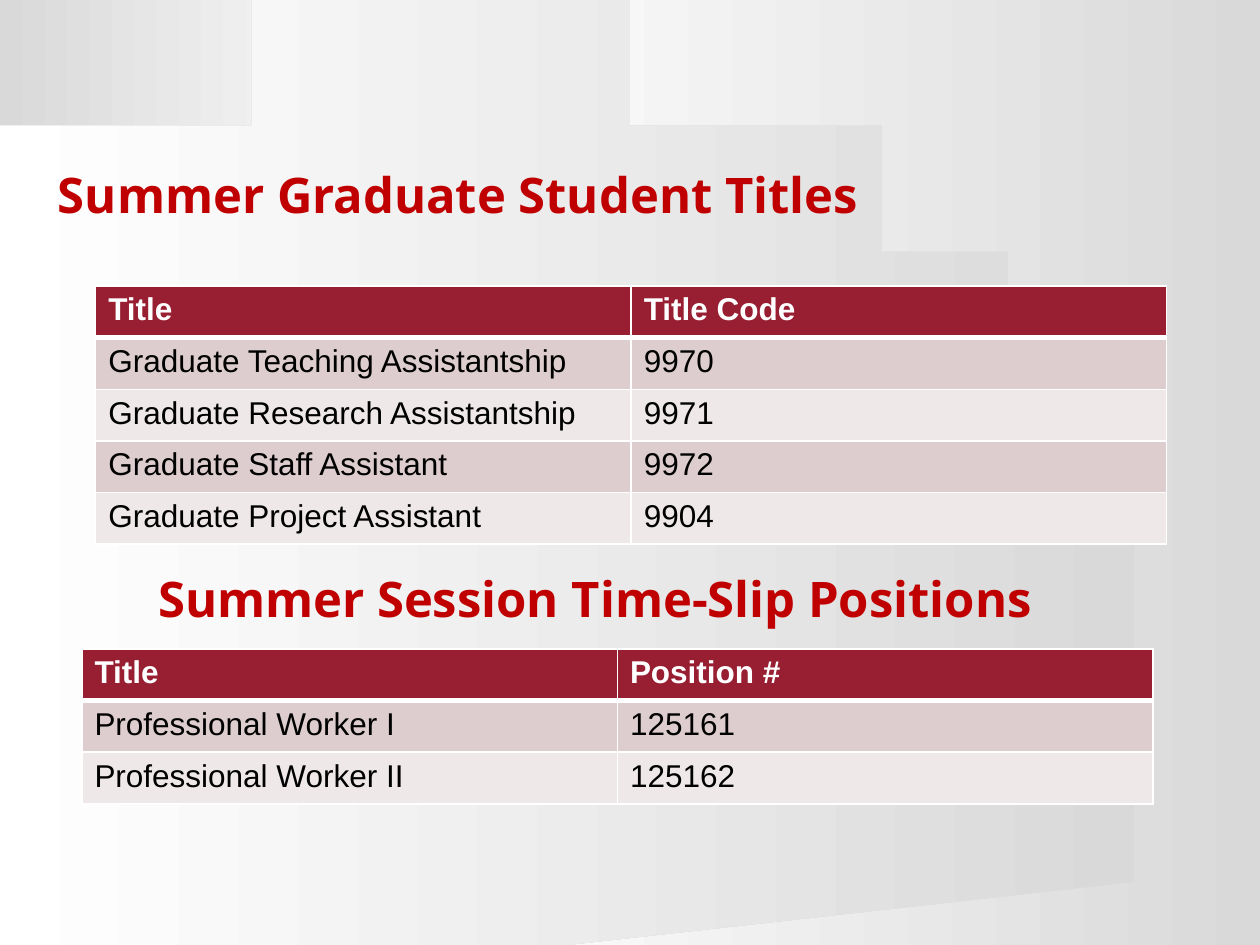
from math import asin, acos, cos, pi, sin

from lxml.etree import SubElement
from pptx import Presentation
from pptx.dml.color import RGBColor
from pptx.enum.shapes import MSO_SHAPE
from pptx.enum.text import MSO_ANCHOR, MSO_AUTO_SIZE, PP_ALIGN
from pptx.oxml.ns import qn
from pptx.util import Inches, Pt

COLORS = {
    "heading": "C00000",
    "header": "981E32",
    "band_dark": "DDCDCE",
    "band_light": "EFE8E8",
    "white": "FFFFFF",
    "black": "000000",
    "grey": "D9D9D9",
}
SLIDE_WIDTH, SLIDE_HEIGHT = 10, 7.5
ROW_HEIGHT = 0.41


def color(name):
    return RGBColor.from_string(COLORS[name])


def fade(shape, angle):
    """Fill a shape from grey to white, without line or shadow."""
    shape.shadow.inherit = False
    shape.line.fill.background()
    shape.fill.gradient()
    shape.fill.gradient_angle = angle
    for stop, name in zip(shape.fill.gradient_stops, ("grey", "white")):
        stop.color.rgb = color(name)


def add_backdrop(slide, left, top, width, height):
    """Two gradient panels under a large circle cut off by the box."""
    right, bottom = left + width, top + height
    split = left + 3.37
    for start, end, angle in ((left, split, 0), (split, right, 180)):
        panel = slide.shapes.add_shape(
            MSO_SHAPE.RECTANGLE,
            Inches(start), Inches(top), Inches(end - start), Inches(height))
        fade(panel, angle)

    # Circle: the arc runs clockwise from the left edge to the bottom edge
    edge = left + 0.01
    center_x, center_y, radius = left + 3.43, top + 6.32, 5.94
    first = pi + acos((center_x - edge) / radius)
    last = 2 * pi + asin((bottom - center_y) / radius)
    steps = 90
    angles = [first + (last - first) * step / steps for step in range(steps + 1)]
    arc = [(center_x + radius * cos(angle), center_y + radius * sin(angle))
           for angle in angles]
    builder = slide.shapes.build_freeform(edge, bottom, scale=Inches(1))
    builder.add_line_segments(arc, close=True)
    fade(builder.convert_to_shape(), 180)


def write_text(text_frame, text, size=18, font="Arial", color_name="black",
               bold=False, align=PP_ALIGN.LEFT, line_spacing=None):
    paragraph = text_frame.paragraphs[0]
    paragraph.alignment = align
    paragraph.line_spacing = line_spacing
    run = paragraph.add_run()
    run.text = text
    run.font.size = Pt(size)
    run.font.name = font
    run.font.bold = bold
    run.font.color.rgb = color(color_name)


def format_heading(shape, text, left, top, width, height, align):
    shape.left, shape.top = Inches(left), Inches(top)
    shape.width, shape.height = Inches(width), Inches(height)
    text_frame = shape.text_frame
    text_frame.word_wrap = True
    text_frame.auto_size = MSO_AUTO_SIZE.SHAPE_TO_FIT_TEXT
    text_frame.vertical_anchor = MSO_ANCHOR.BOTTOM
    write_text(text_frame, text, size=28, font="Open Sans",
               color_name="heading", bold=True, align=align, line_spacing=0.9)


def set_borders(cell, top=1, bottom=1):
    properties = cell._tc.get_or_add_tcPr()
    widths = {"a:lnL": 1, "a:lnR": 1, "a:lnT": top, "a:lnB": bottom}
    for position, (tag, width) in enumerate(widths.items()):
        line = SubElement(properties, qn(tag), w=str(Pt(width)))
        fill = SubElement(line, qn("a:solidFill"))
        SubElement(fill, qn("a:srgbClr"), val=COLORS["white"])
        properties.insert(position, line)


def add_code_table(slide, rows, left, top, width):
    """Header row and banded body rows, with equal columns."""
    table = slide.shapes.add_table(
        len(rows), len(rows[0]), Inches(left), Inches(top),
        Inches(width), Inches(ROW_HEIGHT * len(rows))).table
    for row_index, values in enumerate(rows):
        is_header = row_index == 0
        band = "band_dark" if row_index % 2 else "band_light"
        for column_index, value in enumerate(values):
            cell = table.cell(row_index, column_index)
            cell.fill.solid()
            cell.fill.fore_color.rgb = color("header" if is_header else band)
            set_borders(cell, top=3 if row_index == 1 else 1,
                        bottom=3 if is_header else 1)
            write_text(cell.text_frame, value, bold=is_header,
                       color_name="white" if is_header else "black")


def main():
    presentation = Presentation()
    presentation.slide_width = Inches(SLIDE_WIDTH)
    presentation.slide_height = Inches(SLIDE_HEIGHT)
    slide = presentation.slides.add_slide(presentation.slide_layouts[5])

    add_backdrop(slide, 0, 0, SLIDE_WIDTH, SLIDE_HEIGHT)

    # Graduate student titles
    title = slide.shapes.title
    slide.shapes._spTree.append(title._element)  # in front of the backdrop
    format_heading(title, "Summer Graduate Student Titles",
                   0.36, 1.31, 8.5, 0.52, PP_ALIGN.LEFT)
    add_code_table(slide, [
        ("Title", "Title Code"),
        ("Graduate Teaching Assistantship", "9970"),
        ("Graduate Research Assistantship", "9971"),
        ("Graduate Staff Assistant", "9972"),
        ("Graduate Project Assistant", "9904"),
    ], 0.76, 2.27, 8.5)

    # Time-slip positions
    add_code_table(slide, [
        ("Title", "Position #"),
        ("Professional Worker I", "125161"),
        ("Professional Worker II", "125162"),
    ], 0.65, 5.15, 8.5)
    heading = slide.shapes.add_textbox(0, 0, 0, 0)
    format_heading(heading, "Summer Session Time-Slip Positions",
                   0.47, 4.51, 8.5, 0.52, PP_ALIGN.CENTER)

    presentation.save("out.pptx")


if __name__ == "__main__":
    main()
